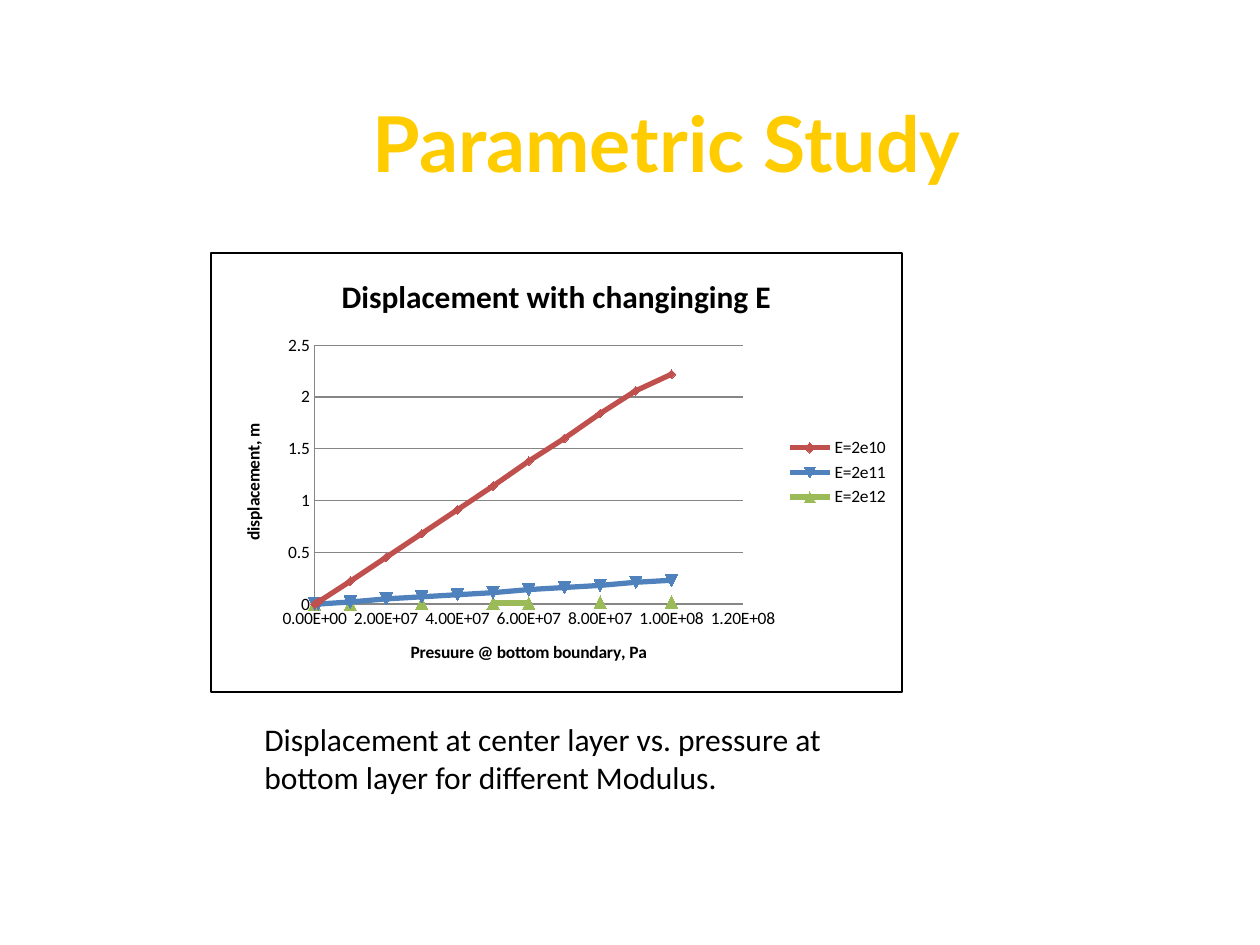
from lxml.etree import fromstring
from pptx import Presentation
from pptx.chart.data import XyChartData
from pptx.dml.color import RGBColor as RGB
from pptx.enum.chart import XL_CHART_TYPE as Kind, XL_LEGEND_POSITION as Side
from pptx.enum.chart import XL_MARKER_STYLE as Mark, XL_TICK_MARK as Tick
from pptx.enum.text import MSO_ANCHOR as Anchor, PP_ALIGN as Align
from pptx.util import Inches, Pt

# Content
HEAD = "Parametric Study"
NOTE = "Displacement at center layer vs. pressure at bottom layer for different Modulus."
PLOT = "Displacement with changinging E"
LOADS = [0, 1e6] + [n * 1e7 for n in range(1, 11)]
CURVES = [
    ("E=2e10", "C0504D", Mark.DIAMOND, 5,
     [0, 0.02, 0.22, 0.45, 0.68, 0.91, 1.14, 1.38, 1.6, 1.84, 2.06, 2.22]),
    ("E=2e11", "4F81BD", Mark.AUTOMATIC, 7,
     [0, 0, 0.02, 0.05, 0.07, 0.09, 0.11, 0.14, 0.16, 0.18, 0.21, 0.23]),
    ("E=2e12", "9BBB59", Mark.TRIANGLE, 7,
     [0, None, 0, None, 0.01, None, 0.01, 0.01, None, 0.02, None, 0.02]),
]
AXES = {
    "category_axis": ("Presuure @ bottom boundary, Pa", "0.00E+00", False,
                      {"minimum_scale": 0, "maximum_scale": 1.2e8, "major_unit": 2e7}),
    "value_axis": ("displacement, m", "General", True,
                   {"minimum_scale": 0, "maximum_scale": 2.5, "major_unit": 0.5}),
}

# Theme: name, size, bold, colour of each kind of text
THEME = {
    "head": {"name": "Lato", "size": Pt(44), "bold": True, "color": "FFCC00"},
    "note": {"name": "Calibri", "size": Pt(18), "bold": False, "color": "000000"},
    "plot": {"name": "Calibri", "size": Pt(18), "bold": True, "color": "000000"},
    "axis": {"name": "Calibri", "size": Pt(10), "bold": True, "color": "000000"},
    "tick": {"name": "Calibri", "size": Pt(10), "bold": False, "color": "000000"},
    "rule": "868686",
    "edge": "000000",
}

# Grid of 60 columns by 45 rows: left, top, width, height
WIDE, HIGH = Inches(10), Inches(7.5)
COLS, ROWS = 60, 45
SPOTS = {"head": (7, 4, 49.5, 5.5), "plot": (10, 12, 33, 21), "note": (12, 34, 30, 4.25)}
INNER = {"x": 0.15, "y": 0.21, "w": 0.62, "h": 0.59}  # shares of the chart

C_NS = "http://schemas.openxmlformats.org/drawingml/2006/chart"
A_NS = "http://schemas.openxmlformats.org/drawingml/2006/main"


def place(spot):
    x, y, w, h = SPOTS[spot]
    return [int(n) for n in (x * WIDE / COLS, y * HIGH / ROWS, w * WIDE / COLS, h * HIGH / ROWS)]


def put(obj, vals):
    for key, val in vals.items():
        setattr(obj, key, val)


def style(font, role):
    look = dict(THEME[role])
    font.color.rgb = RGB.from_string(look.pop("color"))
    put(font, look)


def write(frame, text, role):
    frame.text = text
    style(frame.paragraphs[0].runs[0].font, role)


def stroke(line, tint, width):
    line.color.rgb = RGB.from_string(tint)
    line.width = Pt(width)


def paint(fill, tint):
    fill.solid()
    fill.fore_color.rgb = RGB.from_string(tint)


prs = Presentation()
put(prs, {"slide_width": WIDE, "slide_height": HIGH})
slide = prs.slides.add_slide(prs.slide_layouts[5])

# Title
head = slide.shapes.title
put(head, dict(zip(("left", "top", "width", "height"), place("head"))))
write(head.text_frame, HEAD, "head")
head.text_frame.vertical_anchor = Anchor.MIDDLE
head.text_frame.paragraphs[0].alignment = Align.CENTER

# Chart
data = XyChartData()
for name, *_, vals in CURVES:
    curve = data.add_series(name)
    for load, val in zip(LOADS, vals):
        curve.add_data_point(load, val)
chart = slide.shapes.add_chart(Kind.XY_SCATTER_SMOOTH, *place("plot"), data).chart
style(chart.font, "tick")
write(chart.chart_title.text_frame, PLOT, "plot")
chart.has_legend = True
put(chart.legend, {"position": Side.RIGHT, "include_in_layout": False})

# Curves, with gaps where a value is missing
for curve, (_, tint, mark, size, _) in zip(chart.plots[0].series, CURVES):
    curve.smooth = True
    stroke(curve.format.line, tint, 3)
    put(curve.marker, {"style": mark, "size": size})
    paint(curve.marker.format.fill, tint)
    stroke(curve.marker.format.line, tint, 0.75)
    for point in curve._element.xpath(".//c:yVal//c:pt[c:v='None']"):
        point.getparent().remove(point)

# Axes
for side, (text, form, grid, scale) in AXES.items():
    axis = getattr(chart, side)
    put(axis, scale)
    put(axis, {"major_tick_mark": Tick.NONE, "minor_tick_mark": Tick.NONE,
               "has_major_gridlines": grid})
    put(axis.tick_labels, {"number_format": form, "number_format_is_linked": False})
    write(axis.axis_title.text_frame, text, "axis")
    stroke(axis.format.line, THEME["rule"], 0.75)
    if grid:
        stroke(axis.major_gridlines.format.line, THEME["rule"], 0.75)

# Plot area and chart border
area = chart._chartSpace.xpath("c:chart/c:plotArea")[0]
for old in area.xpath("c:layout"):
    area.remove(old)
modes = '<c:xMode val="edge"/><c:yMode val="edge"/>'
sizes = "".join(f'<c:{key} val="{val}"/>' for key, val in INNER.items())
area.insert(0, fromstring(
    f'<c:layout xmlns:c="{C_NS}"><c:manualLayout><c:layoutTarget val="inner"/>'
    f"{modes}{sizes}</c:manualLayout></c:layout>"))
chart._chartSpace.xpath("c:chart")[0].addnext(fromstring(
    f'<c:spPr xmlns:c="{C_NS}" xmlns:a="{A_NS}"><a:noFill/><a:ln w="{Pt(1.25)}"><a:solidFill>'
    f'<a:srgbClr val="{THEME["edge"]}"/></a:solidFill></a:ln></c:spPr>'))

# Caption
note = slide.shapes.add_textbox(*place("note")).text_frame
note.word_wrap = True
write(note, NOTE, "note")

prs.save("out.pptx")
